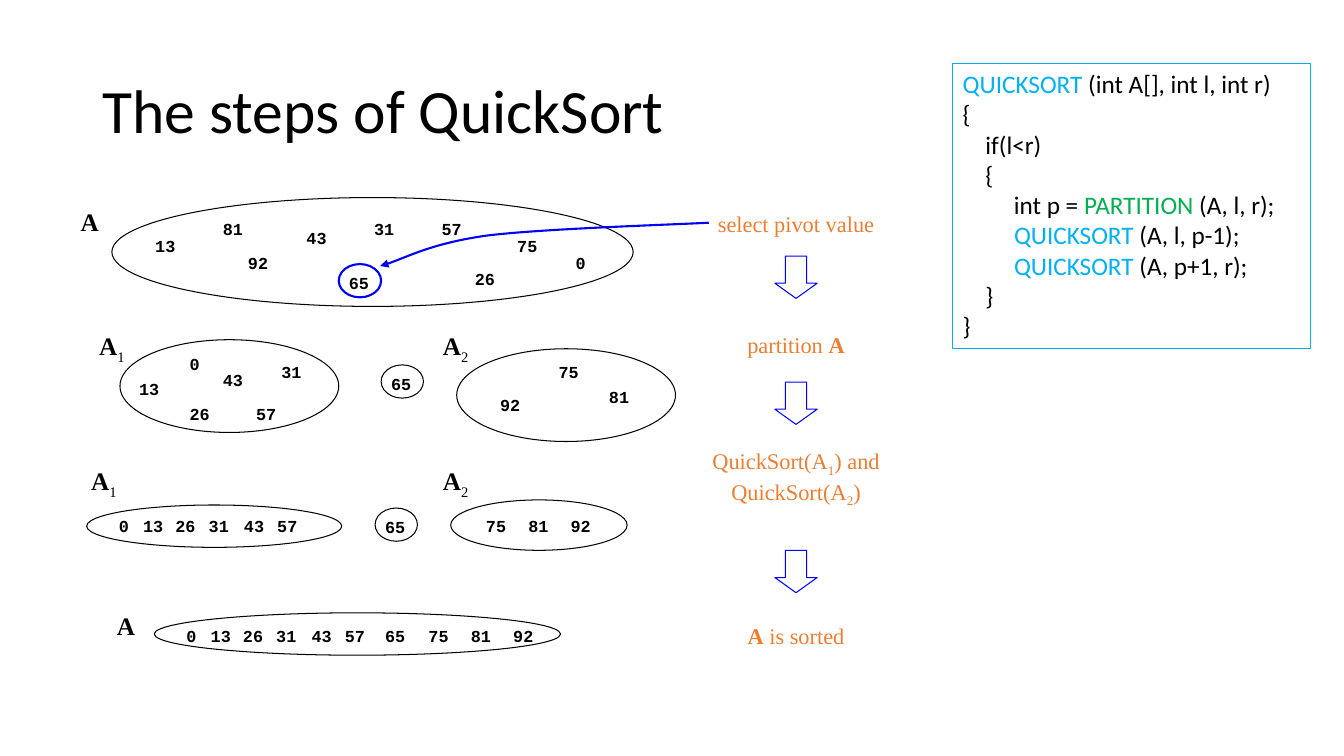
from lxml import etree
from pptx import Presentation
from pptx.dml.color import RGBColor
from pptx.enum.shapes import MSO_SHAPE as SHAPE
from pptx.enum.text import MSO_ANCHOR as ANCHOR, PP_ALIGN as ALIGN
from pptx.oxml.ns import qn
from pptx.util import Inches, Pt

BLACK = RGBColor(0, 0, 0)
WHITE = RGBColor(255, 255, 255)
BLUE = RGBColor(0, 0, 255)
ORANGE = RGBColor(0xED, 0x7D, 0x31)
CYAN = RGBColor(0, 0xB0, 0xF0)
GREEN = RGBColor(0, 0xB0, 0x50)

A = [[("A", "bold")]]
A1 = [[("A", "bold"), ("1", "sub")]]
A2 = [[("A", "bold"), ("2", "sub")]]

# Centres of the numbers, measured from the top left of their set
UNSORTED = [(13, .53, .48), (81, 1.2, .31), (92, 1.45, .65), (43, 2.03, .4),
            (31, 2.7, .31), (57, 3.37, .31), (26, 3.7, .81), (75, 4.12, .48),
            (0, 4.65, .65)]
SMALLER = [(13, .29, .49), (43, 1.12, .4), (31, 1.7, .32), (57, 1.45, .74),
           (26, .79, .74), (0, .74, .24)]
LARGER = [(81, 1.61, .48), (92, .53, .56), (75, 1.11, .23)]
SORTED_X = {0: .37, 13: .66, 26: .98, 31: 1.31, 43: 1.66, 57: 1.99,
            65: 2.39, 75: 2.82, 81: 3.24, 92: 3.66}
SORTED_SMALLER = [(n, x, .21) for n, x in SORTED_X.items() if n < 65]
SORTED_LARGER = [(n, x - 2.37, .26) for n, x in SORTED_X.items() if n > 65]
SORTED_ALL = [(n, x, .23) for n, x in SORTED_X.items()]

STEPS = [
    (2.22, [[("select pivot value", "")]]),
    (3.42, [[("partition ", ""), ("A", "bold")]]),
    (4.74, [[("QuickSort(A", ""), ("1", "sub"), (") and", "")],
            [("QuickSort(A", ""), ("2", "sub"), (")", "")]]),
    (6.3, [[("A", "bold"), (" is sorted", "")]]),
]
ARROW_TOPS = [2.54, 3.79, 5.46]

CODE = [
    [("QUICKSORT", CYAN), (" (int A[], int l, int r)", BLACK)],
    [("{", BLACK)],
    [("    if(l<r)", BLACK)],
    [("    {", BLACK)],
    [("         int p = ", BLACK), ("PARTITION", GREEN), (" (A, l, r);", BLACK)],
    [("         ", BLACK), ("QUICKSORT", CYAN), (" (A, l, p-1);", BLACK)],
    [("         ", BLACK), ("QUICKSORT", CYAN), (" (A, p+1, r);", BLACK)],
    [("    }", BLACK)],
    [("}", BLACK)],
]


def add_outline(s, kind, x, y, w, h, color, width=.75, fill=None):
    sp = s.shapes.add_shape(kind, Inches(x), Inches(y), Inches(w), Inches(h))
    sp.shadow.inherit = False
    if fill is None:
        sp.fill.background()
    else:
        sp.fill.solid()
        sp.fill.fore_color.rgb = fill
    sp.line.color.rgb = color
    sp.line.width = Pt(width)
    return sp


def add_centred(s, cx, cy, w, h, lines, font, size, color):
    """Place unwrapped lines of (text, style) runs around a centre point."""
    tf = s.shapes.add_textbox(Inches(cx - w / 2), Inches(cy - h / 2),
                              Inches(w), Inches(h)).text_frame
    tf.word_wrap = False
    tf.vertical_anchor = ANCHOR.MIDDLE
    for i, runs in enumerate(lines):
        p = tf.add_paragraph() if i else tf.paragraphs[0]
        p.alignment = ALIGN.CENTER
        p.font.name, p.font.size, p.font.color.rgb = font, Pt(size), color
        for text, style in runs:
            r = p.add_run()
            r.text = text
            r.font.name, r.font.size, r.font.color.rgb = font, Pt(size), color
            r.font.bold = style == "bold"
            if style == "sub":
                r.font._element.set("baseline", "-25000")


def draw_title(s, x, y, w, h):
    tf = s.shapes.add_textbox(Inches(x), Inches(y), Inches(w), Inches(h)).text_frame
    tf.word_wrap = True
    tf.vertical_anchor = ANCHOR.MIDDLE
    p = tf.paragraphs[0]
    p.text = "The steps of QuickSort"
    p.line_spacing = .9
    p.font.name, p.font.size, p.font.color.rgb = "Calibri", Pt(44), BLACK


def draw_set(s, x, y, w, h, numbers, label=None, dx=0, dy=0, fill=None,
             color=BLACK, width=.75):
    """Draw an ellipse of numbers, with its label centred at (dx, dy) in it."""
    add_outline(s, SHAPE.OVAL, x, y, w, h, color, width, fill)
    for n, nx, ny in numbers:
        add_centred(s, x + nx, y + ny, .4, .3, [[(str(n), "bold")]],
                    "Courier New", 12, BLACK)
    if label:
        add_centred(s, x + dx, y + dy, .47, .4, label, "Times New Roman", 18, BLACK)


def draw_pivot(s, x, y, color=BLACK, width=.75):
    draw_set(s, x, y, .42, .33, [(65, .2, .19)], color=color, width=width)


def draw_steps(s, x, w):
    """Draw the column of step captions with the block arrows between them."""
    cx = x + w / 2
    for cy, lines in STEPS:
        add_centred(s, cx, cy, w, .32 * len(lines), lines,
                    "Times New Roman", 16, ORANGE)
    for top in ARROW_TOPS:
        sp = add_outline(s, SHAPE.DOWN_ARROW, cx - .21, top, .42, .42, BLUE)
        sp.adjustments[0], sp.adjustments[1] = .5, .358


def draw_pivot_pointer(s, x, y):
    """Curve from the caption at (x, y) down to the chosen pivot."""
    offsets = [(-.37, .02), (-1.68, .06), (-2.22, .13),
               (-2.76, .21), (-3.04, .37), (-3.26, .43)]
    builder = s.shapes.build_freeform(Inches(x), Inches(y))
    builder.add_line_segments([(Inches(x + dx), Inches(y + dy))
                               for dx, dy in offsets], close=False)
    sp = builder.convert_to_shape()
    sp.shadow.inherit = False
    sp.fill.background()
    sp.line.color.rgb = BLUE
    sp.line.width = Pt(1.5)
    etree.SubElement(sp.line._get_or_add_ln(), qn("a:tailEnd"), type="triangle")
    # Every three points become the controls and end of one Bezier segment
    lines = list(sp._element.iter(qn("a:lnTo")))
    outline = lines[0].getparent()
    for i in range(0, len(lines), 3):
        curve = etree.SubElement(outline, qn("a:cubicBezTo"))
        for line in lines[i:i + 3]:
            curve.append(line[0])
            outline.remove(line)


def draw_code(s, x, y, w, h):
    sp = add_outline(s, SHAPE.RECTANGLE, x, y, w, h, CYAN)
    tf = sp.text_frame
    tf.word_wrap = True
    tf.vertical_anchor = ANCHOR.TOP
    for i, runs in enumerate(CODE):
        p = tf.add_paragraph() if i else tf.paragraphs[0]
        p.alignment = ALIGN.LEFT
        p.font.name, p.font.size = "Calibri", Pt(18)
        for text, color in runs:
            r = p.add_run()
            r.text = text
            r.font.name, r.font.size, r.font.color.rgb = "Calibri", Pt(18), color


def main():
    prs = Presentation()
    prs.slide_width, prs.slide_height = Inches(13.33), Inches(7.5)
    s = prs.slides.add_slide(prs.slide_layouts[6])
    draw_title(s, .92, .4, 8.4, 1.45)

    draw_set(s, 1.11, 1.96, 5.17, 1.08, UNSORTED, A, -.22, .24, WHITE)
    draw_pivot(s, 3.36, 2.62, BLUE, 1.5)

    draw_set(s, 1.19, 3.37, 2.17, .92, SMALLER, A1, -.08, .08, WHITE)
    draw_pivot(s, 3.78, 3.62)
    draw_set(s, 4.53, 3.46, 2.17, .92, LARGER, A2, -.01, -.01)

    draw_set(s, .86, 5.01, 2.53, .42, SORTED_SMALLER, A1, .17, -.22, WHITE)
    draw_pivot(s, 3.72, 5.04)
    draw_set(s, 4.47, 4.96, 1.75, .5, SORTED_LARGER, A2, .05, -.17)

    draw_set(s, 1.53, 6.08, 4.03, .42, SORTED_ALL, A, -.28, .12, WHITE)

    draw_steps(s, 6.95, 1.89)
    draw_pivot_pointer(s, 7.03, 2.21)
    draw_code(s, 9.45, .63, 3.55, 2.83)
    prs.save("out.pptx")


if __name__ == "__main__":
    main()
